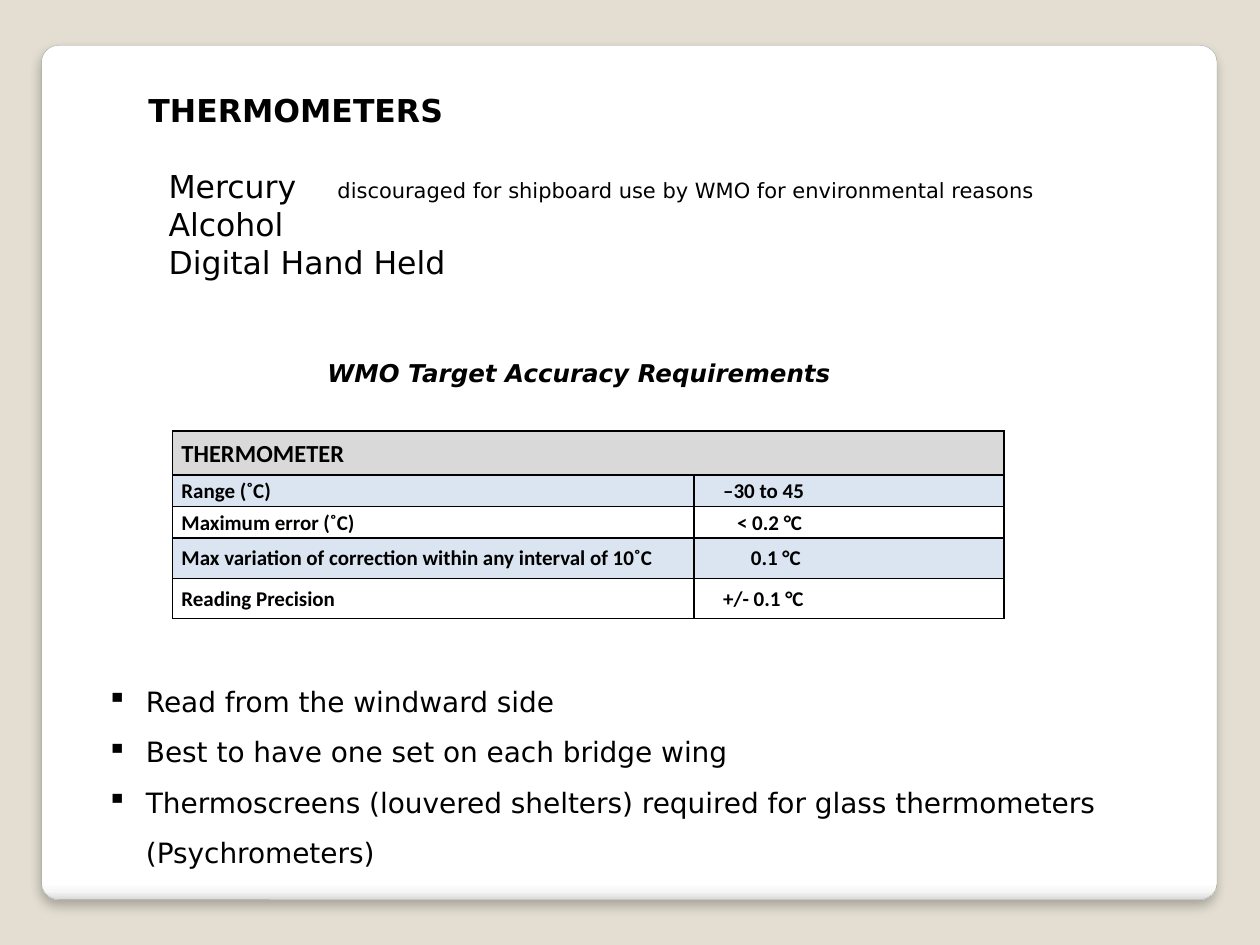
"""Build the thermometers slide with its accuracy table and advice list."""
import pptx
import pptx.enum.shapes
import pptx.enum.text
import pptx.oxml
import pptx.oxml.ns
import pptx.util

COLORS = {"background": "E3DED1", "outline": "A4A4A4", "ink": "000000", "header": "D9D9D9", "band": "DBE5F1"}
NAMESPACE = pptx.oxml.ns.nsdecls("a")

presentation = pptx.Presentation()
presentation.slide_width = pptx.util.Inches(10)
presentation.slide_height = pptx.util.Inches(7.5)
column = presentation.slide_width / 100
row = presentation.slide_height / 75
slide = presentation.slides.add_slide(presentation.slide_layouts[6])
slide.background.fill.solid()
slide.background.fill.fore_color.rgb = pptx.dml.color.RGBColor.from_string(COLORS["background"])


def area(left, top, width, height):
    return [int(length) for length in (left * column, top * row, width * column, height * row)]


def add_run(paragraph, text, size, name="DejaVu Sans", **values):
    run = paragraph.add_run()
    run.text = text
    run.font.color.rgb = pptx.dml.color.RGBColor.from_string(COLORS["ink"])
    for attribute, value in {"size": pptx.util.Pt(size), "name": name, **values}.items():
        setattr(run.font, attribute, value)


card = slide.shapes.add_shape(pptx.enum.shapes.MSO_SHAPE.ROUNDED_RECTANGLE, *area(3.3, 3.6, 93.3, 67.8))
card.adjustments[0] = 0.02
card.fill.gradient()
card.fill.gradient_angle = 270
stops = card.fill._fill._gradFill.find(pptx.oxml.ns.qn("a:gsLst"))
for stop in list(stops):
    stops.remove(stop)
for position, color in [(0, "FFFFFF"), (98, "FFFFFF"), (99, "F7F7F7"), (100, "DADADA")]:
    stops.append(pptx.oxml.parse_xml(
        f'<a:gs {NAMESPACE} pos="{position * 1000}"><a:srgbClr val="{color}"/></a:gs>'))
card.line.color.rgb = pptx.dml.color.RGBColor.from_string(COLORS["outline"])
card.line.width = pptx.util.Pt(0.16)
card.shadow.inherit = False
card._element.spPr.find(pptx.oxml.ns.qn("a:effectLst")).append(pptx.oxml.parse_xml(
    f'<a:outerShdw {NAMESPACE} blurRad="{pptx.util.Pt(6)}" dist="{pptx.util.Pt(4)}" dir="5400000" '
    f'algn="t" rotWithShape="0"><a:srgbClr val="{COLORS["ink"]}"><a:alpha val="25000"/></a:srgbClr></a:outerShdw>'))

frames = {}
for name, place, wraps in [
    ("types", (10.8, 6.7, 80.8, 16.2), True),
    ("caption", (25, 27.9, 43.7, 3.4), False),
    ("advice", (7.5, 52.5, 87.5, 17.2), True),
]:
    frames[name] = slide.shapes.add_textbox(*area(*place)).text_frame
    frames[name].word_wrap = wraps

add_run(frames["types"].paragraphs[0], "THERMOMETERS", 18, bold=True)
for text, note, gap in [
    ("Mercury", "discouraged for shipboard use by WMO for environmental reasons", 22),
    ("Alcohol", "", 0),
    ("Digital Hand Held", "", 0),
]:
    paragraph = frames["types"].add_paragraph()
    paragraph.space_before = pptx.util.Pt(gap)
    properties = paragraph._p.get_or_add_pPr()
    properties.set("indent", str(int(1.6 * column)))
    add_run(paragraph, text, 18)
    if note:
        properties.append(pptx.oxml.parse_xml(
            f'<a:tabLst {NAMESPACE}><a:tab pos="{int(18.1 * column)}" algn="l"/></a:tabLst>'))
        add_run(paragraph, "\t" + note, 12)

add_run(frames["caption"].paragraphs[0], "WMO Target Accuracy Requirements", 14, bold=True, italic=True)

for index, text in enumerate([
    "Read from the windward side",
    "Best to have one set on each bridge wing",
    "Thermoscreens (louvered shelters) required for glass thermometers (Psychrometers)",
]):
    paragraph = frames["advice"].add_paragraph() if index else frames["advice"].paragraphs[0]
    paragraph.line_spacing = 1.5
    properties = paragraph._p.get_or_add_pPr()
    properties.set("marL", str(int(3.1 * column)))
    properties.set("indent", str(int(-3.1 * column)))
    properties.append(pptx.oxml.parse_xml(f'<a:buChar {NAMESPACE} char="▪"/>'))
    add_run(paragraph, text, 16)

records = [
    ("THERMOMETER", "", 0, 3.5, "header"),
    ("Range (˚C)", "–30 to 45", 1.6, 2.5, "band"),
    ("Maximum error (˚C)", "< 0.2 °C", 2.7, 2.5, None),
    ("Max variation of correction within any interval of 10˚C", "0.1 °C", 3.8, 3.2, "band"),
    ("Reading Precision", "+/- 0.1 °C", 1.6, 3.2, None),
]
table = slide.shapes.add_table(len(records), 2, *area(13.7, 34.2, 66, 14.9)).table
for table_column, share in zip(table.columns, (41.4, 24.6)):
    table_column.width = int(share * column)
for index, (label, value, indent, height, fill) in enumerate(records):
    table.rows[index].height = int(height * row)
    for cell, text, margin in zip(table.rows[index].cells, (label, value), (0, indent)):
        for attribute, setting in {
            "vertical_anchor": pptx.enum.text.MSO_ANCHOR.MIDDLE,
            "margin_left": int(0.7 * column),
            "margin_right": int(0.7 * column),
            "margin_top": int(0.1 * row),
            "margin_bottom": 0,
        }.items():
            setattr(cell, attribute, setting)
        paragraph = cell.text_frame.paragraphs[0]
        paragraph._p.get_or_add_pPr().set("marL", str(int(margin * column)))
        if text:
            add_run(paragraph, text, 12 if index else 14, "Calibri", bold=True)
        properties = cell._tc.get_or_add_tcPr()
        for side in ("lnL", "lnR", "lnT", "lnB"):
            properties.append(pptx.oxml.parse_xml(
                f'<a:{side} {NAMESPACE} w="{pptx.util.Pt(1)}"><a:solidFill>'
                f'<a:srgbClr val="{COLORS["ink"]}"/></a:solidFill></a:{side}>'))
        if fill:
            cell.fill.solid()
            cell.fill.fore_color.rgb = pptx.dml.color.RGBColor.from_string(COLORS[fill])
        else:
            cell.fill.background()
table.cell(0, 0).merge(table.cell(0, 1))

presentation.save("out.pptx")
